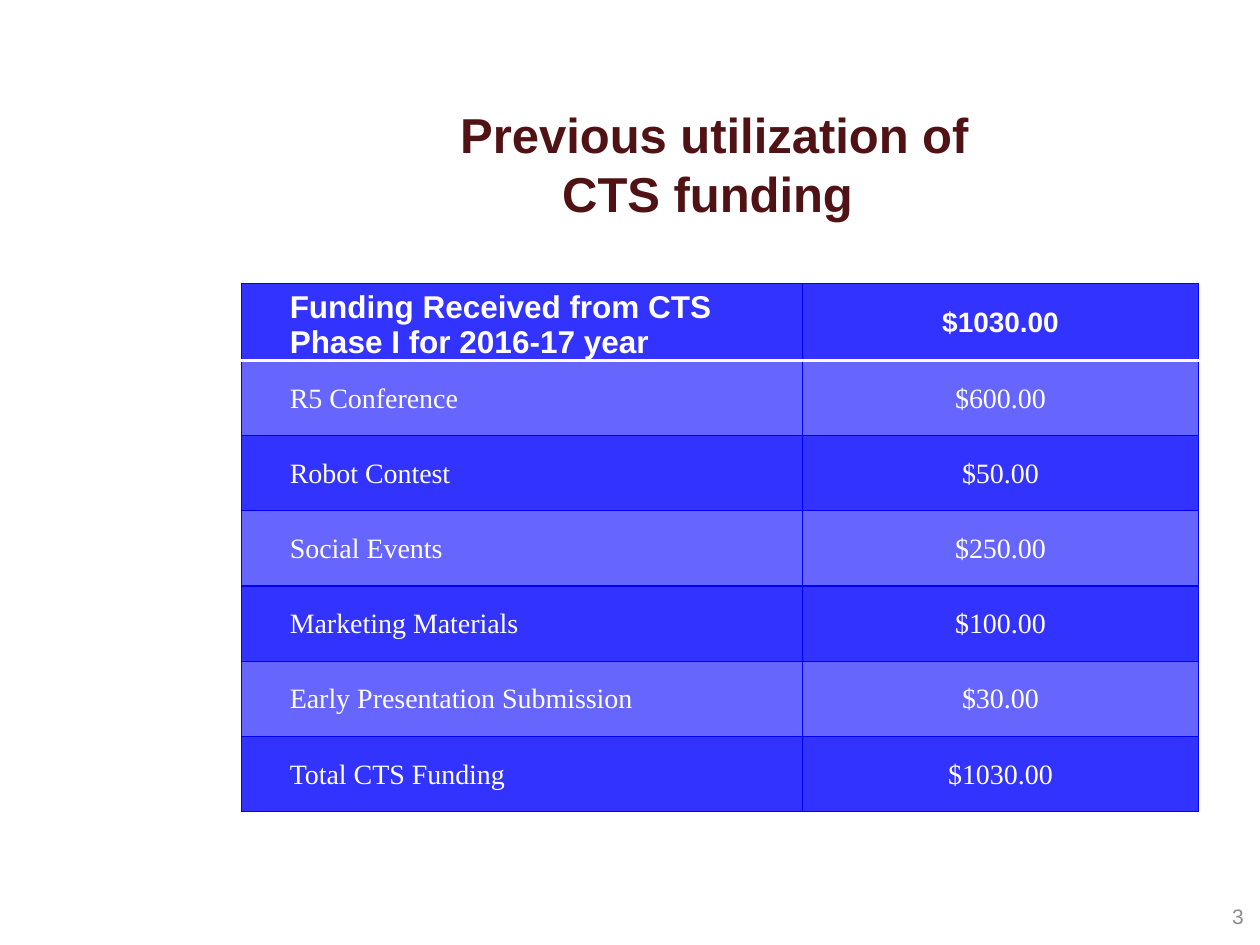
from lxml import etree
from pptx import Presentation
from pptx.dml.color import RGBColor
from pptx.enum.text import MSO_ANCHOR, PP_ALIGN
from pptx.oxml.ns import qn
from pptx.util import Inches, Pt

MIDDLE, BOTTOM = MSO_ANCHOR.MIDDLE, MSO_ANCHOR.BOTTOM
LEFT, CENTER, RIGHT = PP_ALIGN.LEFT, PP_ALIGN.CENTER, PP_ALIGN.RIGHT


def style_text(frame, align, font_name, size, color, bold=False):
    frame.word_wrap = True
    for paragraph in frame.paragraphs:
        paragraph.alignment = align
        for run in paragraph.runs:
            run.font.name = font_name
            run.font.size = Pt(size)
            run.font.bold = bold
            run.font.color.rgb = RGBColor.from_string(color)


def add_border(cell, side, color, width):
    line = etree.SubElement(cell._tc.get_or_add_tcPr(), qn(f"a:ln{side}"), w=str(Pt(width)))
    fill = etree.SubElement(line, qn("a:solidFill"))
    etree.SubElement(fill, qn("a:srgbClr"), val=color)


prs = Presentation()
prs.slide_width, prs.slide_height = Inches(10), Inches(7.5)
slide = prs.slides.add_slide(prs.slide_layouts[6])

# Slide number
number = slide.shapes.add_textbox(Inches(7.64), Inches(7.07), Inches(2.33), Inches(0.4)).text_frame
number.text = "3"
number.vertical_anchor = MIDDLE
style_text(number, RIGHT, "Arial", 12, "8C8C8C")

# Funding table
funding = [
    ("Funding Received from CTS Phase I for 2016-17 year", "$1030.00"),
    ("R5 Conference", "$600.00"),
    ("Robot Contest", "$50.00"),
    ("Social Events", "$250.00"),
    ("Marketing Materials", "$100.00"),
    ("Early Presentation Submission", "$30.00"),
    ("Total CTS Funding", "$1030.00"),
]
table = slide.shapes.add_table(len(funding), 2, Inches(1.92), Inches(2.25),
                               Inches(7.59), Inches(4.18)).table
table.columns[0].width = Inches(4.45)
table.columns[1].width = Inches(3.14)

for row, entry in enumerate(funding):
    table.rows[row].height = Inches(4.18 / len(funding))
    header = row == 0
    for col, text in enumerate(entry):
        cell = table.cell(row, col)
        label = col == 0
        cell.text = text
        cell.margin_left = Inches(0.38 if label else 0.01)
        cell.margin_right = cell.margin_top = Inches(0.01)
        cell.margin_bottom = 0
        cell.vertical_anchor = BOTTOM if header and label else MIDDLE
        style_text(cell.text_frame, LEFT if label else CENTER,
                   "Arial" if header else "Times New Roman",
                   18 if header and label else 16, "FFFFFF", bold=header)
        # A white rule separates the header from the body
        for side in "LRTB":
            under_header = (row, side) in ((0, "B"), (1, "T"))
            add_border(cell, side, *(("FFFFFF", 2) if under_header else ("0000F9", 0.75)))
        cell.fill.solid()
        cell.fill.fore_color.rgb = RGBColor.from_string("6666FF" if row % 2 else "3333FF")

# Title
title = slide.shapes.add_textbox(Inches(1.92), Inches(0.67), Inches(7.5), Inches(1.25)).text_frame
title.text = "Previous utilization of\vCTS funding "
title.vertical_anchor = MIDDLE
style_text(title, CENTER, "Arial", 28, "501215", bold=True)

prs.save("out.pptx")
